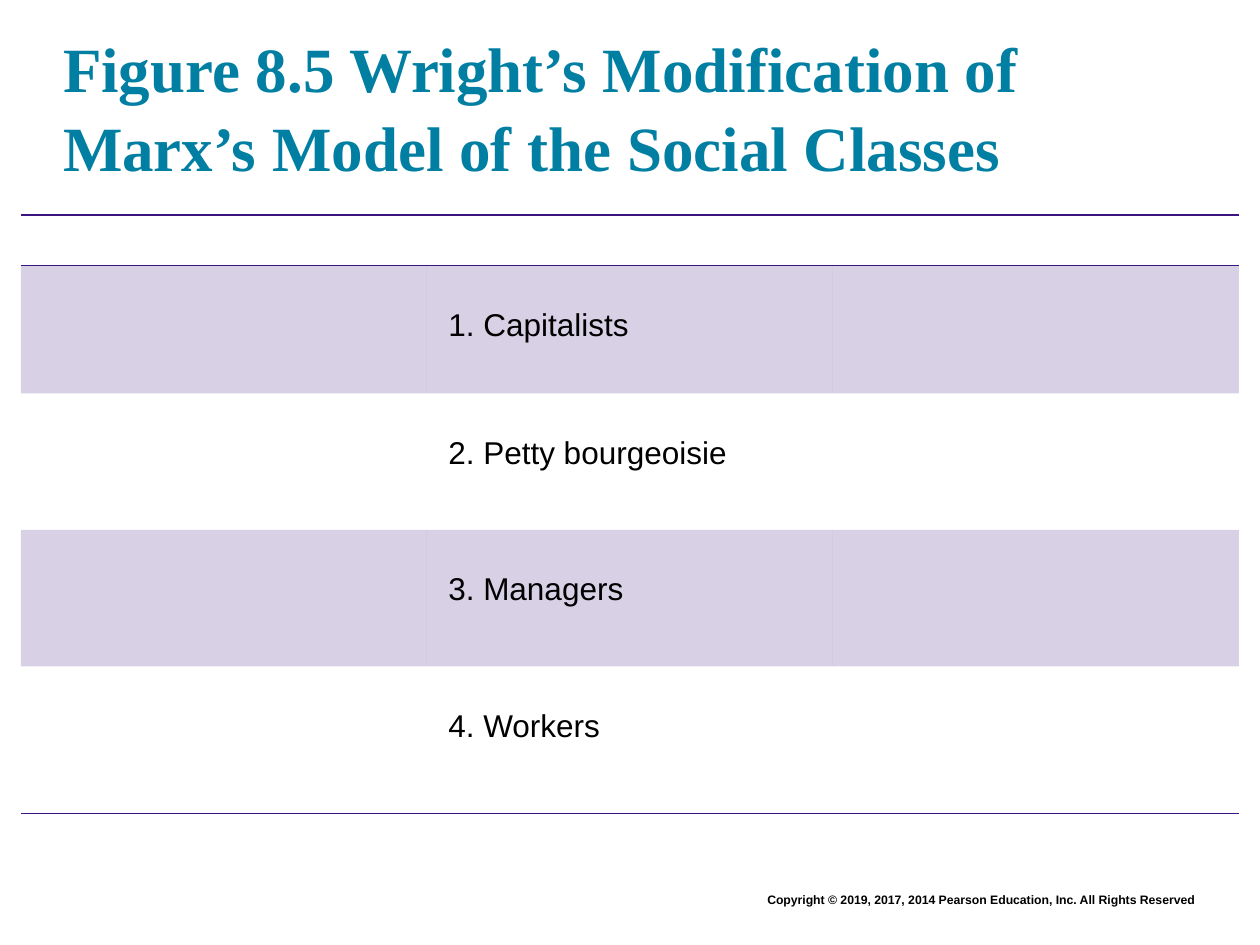
from dataclasses import dataclass

from lxml import etree
from pptx import Presentation
from pptx.dml.color import RGBColor
from pptx.enum.text import MSO_ANCHOR, PP_ALIGN
from pptx.oxml.ns import qn
from pptx.util import Pt

TOP, MIDDLE = MSO_ANCHOR.TOP, MSO_ANCHOR.MIDDLE
LEFT, RIGHT = PP_ALIGN.LEFT, PP_ALIGN.RIGHT
TITLE_ONLY = 5
NO_STYLE = "{2D5ABB26-0587-4C30-8999-92F81FD0307C}"


@dataclass(frozen=True)
class Theme:
    heading: str = "007FA3"
    ink: str = "000000"
    rule: str = "3C1581"
    band_alpha: int = 20
    heading_font: str = "Times New Roman"
    body_font: str = "Arial"
    heading_size: int = 36
    body_size: int = 18
    copyright_size: int = 7


THEME = Theme()
CLASSES = ["Capitalists", "Petty bourgeoisie", "Managers", "Workers"]
ROW_HEIGHTS = [21.6, 73.2, 78, 78, 84]


def style(paragraph, font, size, color, bold=False, align=LEFT):
    paragraph.alignment = align
    for run in paragraph.runs:
        run.font.name = font
        run.font.size = Pt(size)
        run.font.bold = bold
        run.font.color.rgb = RGBColor.from_string(color)


def place(shape, box):
    shape.left, shape.top, shape.width, shape.height = map(Pt, box)


def add_heading(slide, box):
    heading = slide.shapes.title
    place(heading, box)
    frame = heading.text_frame
    frame.margin_left = frame.margin_right = 0
    frame.margin_top = frame.margin_bottom = 0
    frame.vertical_anchor = MIDDLE
    frame.word_wrap = True
    frame.text = "Figure 8.5 Wright’s Modification of Marx’s Model of the Social Classes"
    frame.paragraphs[0].line_spacing = 1.05
    style(frame.paragraphs[0], THEME.heading_font, THEME.heading_size, THEME.heading, True)


def add_rule(cell, side):
    line = etree.SubElement(cell._tc.get_or_add_tcPr(), qn(f"a:ln{side}"), w=str(Pt(1)))
    fill = etree.SubElement(line, qn("a:solidFill"))
    etree.SubElement(fill, qn("a:srgbClr"), val=THEME.rule)


def fill_band(cell):
    cell.fill.solid()
    cell.fill.fore_color.rgb = RGBColor.from_string(THEME.rule)
    color = cell._tc.tcPr.find(f".//{qn('a:srgbClr')}")
    etree.SubElement(color, qn("a:alpha"), val=str(THEME.band_alpha * 1000))


def add_class_table(slide, box):
    frame = slide.shapes.add_table(len(ROW_HEIGHTS), 3, *map(Pt, box))
    table = frame.table
    table.first_row = table.horz_banding = False
    table._tbl.tblPr.find(qn("a:tableStyleId")).text = NO_STYLE
    for column in table.columns:
        column.width = Pt(box[2] / 3)
    for index, height in enumerate(ROW_HEIGHTS):
        row = table.rows[index]
        row.height = Pt(height)
        for cell in row.cells:
            if index == 0:
                add_rule(cell, "T")
            if index in (0, len(CLASSES)):
                add_rule(cell, "B")
            if index % 2:
                fill_band(cell)
            else:
                cell.fill.background()
    table.cell(0, 0).merge(table.cell(0, 2))
    for number, name in enumerate(CLASSES, 1):
        cell = table.cell(number, 1)
        cell.margin_left, cell.margin_top = Pt(12.2), Pt(24.3)
        cell.vertical_anchor = TOP
        cell.text = f"{number}. {name}"
        style(cell.text_frame.paragraphs[0], THEME.body_font, THEME.body_size, THEME.ink)


def add_copyright(slide, box):
    frame = slide.shapes.add_textbox(*map(Pt, box)).text_frame
    frame.word_wrap = True
    frame.text = "Copyright © 2019, 2017, 2014 Pearson Education, Inc. All Rights Reserved"
    style(frame.paragraphs[0], THEME.body_font, THEME.copyright_size, THEME.ink, True, RIGHT)


def main():
    deck = Presentation()
    deck.slide_width, deck.slide_height = Pt(720), Pt(540)
    slide = deck.slides.add_slide(deck.slide_layouts[TITLE_ONLY])
    add_copyright(slide, (126, 506.2, 563.8, 15.8))
    add_heading(slide, (36, 18, 648, 84.2))
    add_class_table(slide, (12, 122.8, 696, 342))
    deck.save("out.pptx")


if __name__ == "__main__":
    main()
